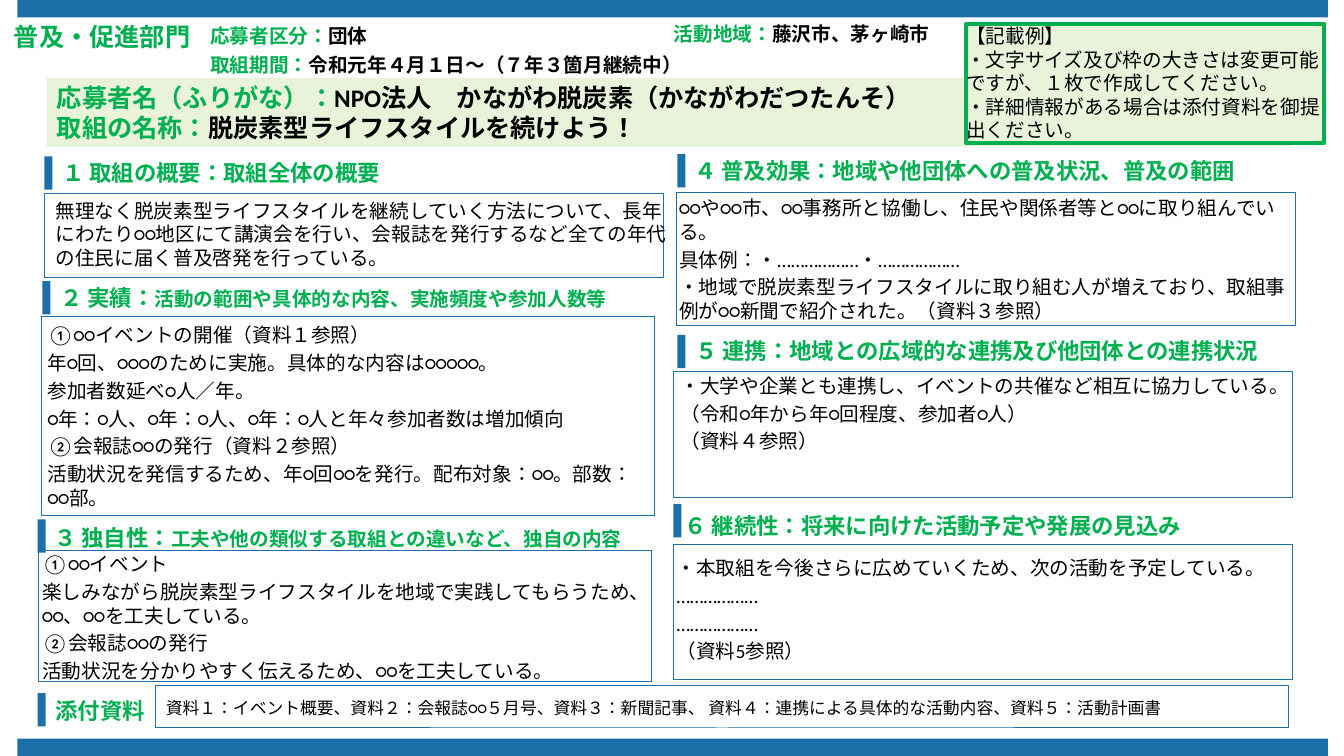
"""Build the one-page activity summary slide."""
from lxml.etree import SubElement
from pptx import Presentation
from pptx.dml.color import RGBColor
from pptx.enum.lang import MSO_LANGUAGE_ID
from pptx.enum.shapes import MSO_SHAPE
from pptx.enum.text import MSO_ANCHOR, MSO_AUTO_SIZE, PP_ALIGN
from pptx.oxml.ns import qn
from pptx.util import Inches, Pt

WIDE, HIGH = 13.33, 7.5
BLUE, GREEN, PALE, BLACK = "1D6FA9", "00B050", "E8F3DA", "000000"
FONT = "Calibri"

TITLE = "普及・促進部門"
FACTS = [
    ("応募者区分：", "団体", (14.9, 2.5, 35.6, 4.5)),
    ("活動地域：", "藤沢市、茅ヶ崎市", (49.4, 2.3, 43.1, 4.5)),
    ("取組期間：", "令和元年４月１日～（７年３箇月継続中）", (14.9, 6.3, 81.2, 4.5)),
]
NAMES = [
    ("応募者名（ふりがな）：", "NPO法人　かながわ脱炭素（かながわだつたんそ）"),
    ("取組の名称：", "脱炭素型ライフスタイルを続けよう！"),
]
NOTE = [
    "【記載例】",
    "・文字サイズ及び枠の大きさは変更可能ですが、１枚で作成してください。",
    "・詳細情報がある場合は添付資料を御提出ください。",
]
# Each part: heading, smaller heading, bar, heading box, frame, text box, size, gap, lines
PARTS = [
    ("１ 取組の概要：取組全体の概要", "", (3.3, 20.7), (3.9, 20.4, 25.4),
     (3.3, 25.6, 46.1, 11.1), (3.4, 25.6, 47.6, 10.8), 14, 0, [
        "無理なく脱炭素型ライフスタイルを継続していく方法について、長年にわたり○○地区にて講演会を行い、"
        "会報誌を発行するなど全ての年代の住民に届く普及啓発を行っている。"]),
    ("２ 実績：", "活動の範囲や具体的な内容、実施頻度や参加人数等", (3.15, 37.2), (3.75, 36.9, 42.5),
     (3.1, 41.9, 45.6, 26.3), (2.8, 42.1, 46, 29.9), 14, 3, [
        "①○○イベントの開催（資料１参照）",
        "年○回、○○○のために実施。具体的な内容は○○○○○。",
        "参加者数延べ○人／年。",
        "○年：○人、○年：○人、○年：○人と年々参加者数は増加傾向",
        "②会報誌○○の発行（資料２参照）",
        "活動状況を発信するため、年○回○○を発行。配布対象：○○。部数：○○部。"]),
    ("３ 独自性：", "工夫や他の類似する取組との違いなど、独自の内容", (2.8, 68.7), (3.3, 68.7, 44.2),
     (2.9, 72.8, 45.6, 17.3), (2.4, 72.4, 45.6, 18.8), 14, 3, [
        "①○○イベント",
        "楽しみながら脱炭素型ライフスタイルを地域で実践してもらうため、○○、○○を工夫している。",
        "②会報誌○○の発行",
        "活動状況を分かりやすく伝えるため、○○を工夫している。"]),
    ("４ 普及効果：地域や他団体への普及状況、普及の範囲", "", (50.4, 20.4), (50.9, 20.1, 41.9),
     (50.3, 25.5, 46.1, 17.6), (49.8, 25.3, 46.7, 21.9), 14, 3, [
        "○○や○○市、○○事務所と協働し、住民や関係者等と○○に取り組んでいる。",
        "具体例：・………………・………………",
        "・地域で脱炭素型ライフスタイルに取り組む人が増えており、取組事例が○○新聞で紹介された。（資料３参照）"]),
    ("５ 連携：地域との広域的な連携及び他団体との連携状況", "", (50.4, 44.3), (51, 44, 43.6),
     (50.1, 49.1, 46.1, 16.7), (49.9, 48.8, 47.1, 11.9), 14, 3, [
        "・大学や企業とも連携し、イベントの共催など相互に協力している。",
        "（令和○年から年○回程度、参加者○人）",
        "（資料４参照）"]),
    ("６ 継続性：将来に向けた活動予定や発展の見込み", "", (50.1, 66.7), (50.2, 67.1, 38.9),
     (50.1, 72, 46.1, 17.9), (49.6, 72.9, 46.4, 15.6), 14, 3, [
        "・本取組を今後さらに広めていくため、次の活動を予定している。",
        "………………",
        "………………",
        "（資料5参照）"]),
    ("添付資料", "", (2.8, 91.7), (3.4, 91.5, 8.3),
     (11.6, 90.7, 84.3, 5.6), (11.6, 91.6, 88.4, 4), 12, 3, [
        "資料１：イベント概要、資料２：会報誌○○５月号、資料３：新聞記事、 "
        "資料４：連携による具体的な活動内容、資料５：活動計画書"]),
]


def tint(code):
    return RGBColor.from_string(code)


def place(x, y, w, h):
    return [Inches(v * side / 100) for v, side in zip((x, y, w, h), (WIDE, HIGH) * 2)]


def style(run, size, color, bold):
    font = run.font
    font.name, font.size, font.bold = FONT, Pt(size), bold
    font.color.rgb = tint(color)
    font.language_id = MSO_LANGUAGE_ID.JAPANESE
    SubElement(run._r.get_or_add_rPr(), qn("a:ea")).set("typeface", FONT)


def write(frame, lines, gap=0, align=PP_ALIGN.LEFT):
    for i, line in enumerate(lines):
        para = frame.add_paragraph() if i else frame.paragraphs[0]
        para.alignment, para.space_after = align, Pt(gap)
        for text, *look in line:
            run = para.add_run()
            run.text = text
            style(run, *look)


def block(slide, area, fill=None, line=None, width=0.75):
    shape = slide.shapes.add_shape(MSO_SHAPE.RECTANGLE, *place(*area))
    shape.shadow.inherit = False
    if fill:
        shape.fill.solid()
        shape.fill.fore_color.rgb = tint(fill)
    else:
        shape.fill.background()
    if line:
        shape.line.color.rgb = tint(line)
        shape.line.width = Pt(width)
    else:
        shape.line.fill.background()
    return shape


def label(slide, area, lines, gap=3, wrap=True):
    frame = slide.shapes.add_textbox(*place(*area)).text_frame
    frame.word_wrap = wrap
    frame.auto_size = MSO_AUTO_SIZE.NONE if wrap else MSO_AUTO_SIZE.SHAPE_TO_FIT_TEXT
    write(frame, lines, gap)


def pair(head, value, size):
    return [(head, size, GREEN, True), (value, size, BLACK, True)]


def main():
    deck = Presentation()
    deck.slide_width, deck.slide_height = Inches(WIDE), Inches(HIGH)
    slide = deck.slides.add_slide(deck.slide_layouts[5])

    title = slide.shapes.title
    title.left, title.top, title.width, title.height = place(0.2, 2.1, 14.8, 5.3)
    frame = title.text_frame
    frame.word_wrap, frame.vertical_anchor = False, MSO_ANCHOR.TOP
    frame.auto_size = MSO_AUTO_SIZE.SHAPE_TO_FIT_TEXT
    write(frame, [[(TITLE, 18, GREEN, True)]], 3, PP_ALIGN.CENTER)

    for top in (0, 97.7):
        block(slide, (1.3, top, 97.5, 2.3), BLUE)
    band = block(slide, (3.5, 10.3, 92.6, 9.1), PALE)
    write(band.text_frame, [pair(*name, 18) for name in NAMES])
    for head, value, area in FACTS:
        label(slide, area, [pair(head, value, 14)])

    for head, small, bar, spot, box, area, size, gap, lines in PARTS:
        block(slide, (*bar, 0.6, 4.4), BLUE)
        runs = [(head, 16, GREEN, True)]
        if small:
            runs.append((small, 14, GREEN, True))
        label(slide, (*spot, 4.9), [runs], wrap=False)
        block(slide, box, line=BLUE)
        label(slide, area, [[(line, size, BLACK, False)] for line in lines], gap)

    frame = block(slide, (71.9, 3.2, 26.6, 15.7), PALE, GREEN, 3).text_frame
    frame.margin_left = frame.margin_right = frame.margin_top = frame.margin_bottom = 0
    frame.vertical_anchor = MSO_ANCHOR.TOP
    write(frame, [[(line, 14, BLACK, False)] for line in NOTE])
    deck.save("out.pptx")


if __name__ == "__main__":
    main()
